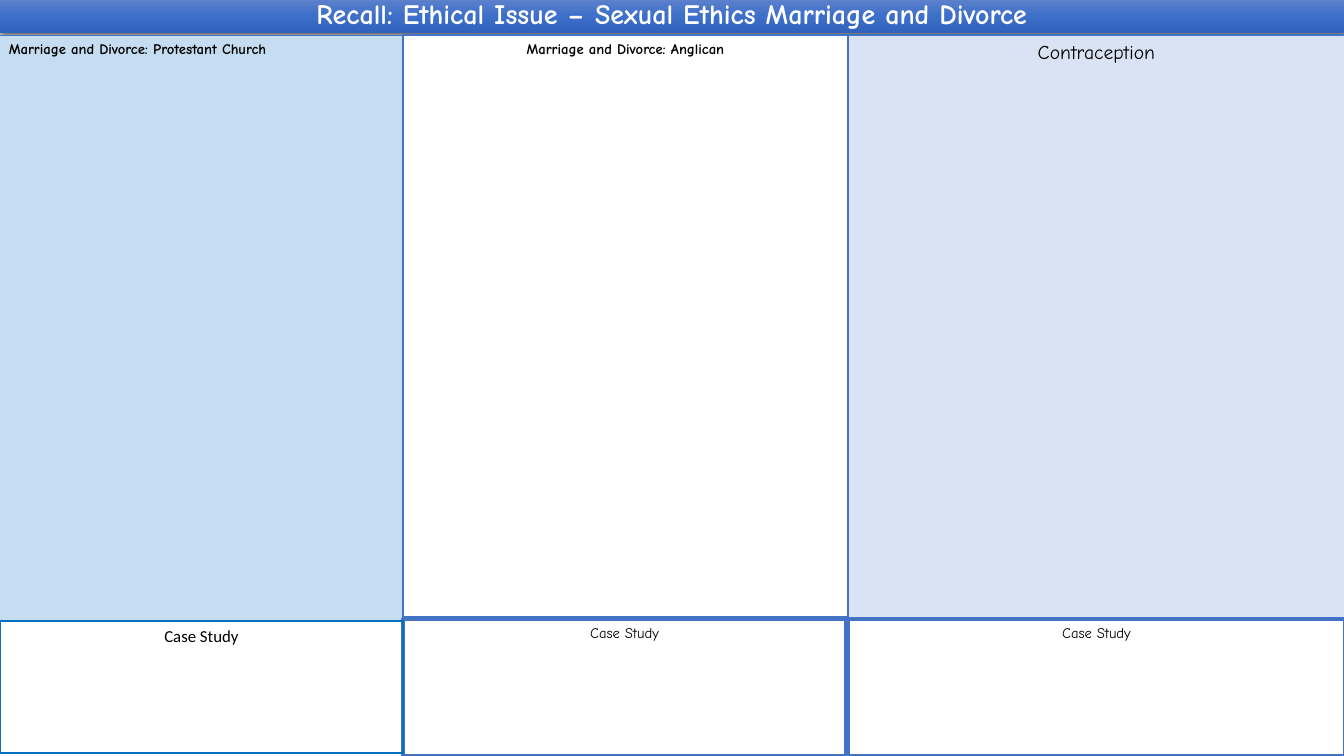
from dataclasses import dataclass

from lxml import etree
from pptx import Presentation
from pptx.dml.color import RGBColor
from pptx.enum.shapes import MSO_SHAPE
from pptx.enum.text import MSO_ANCHOR, MSO_AUTO_SIZE, PP_ALIGN
from pptx.oxml import parse_xml
from pptx.oxml.ns import nsdecls, qn
from pptx.shapes.base import BaseShape
from pptx.slide import Slide
from pptx.text.text import TextFrame
from pptx.util import Emu, Pt

RECTANGLE = MSO_SHAPE.RECTANGLE
TOP, MIDDLE = MSO_ANCHOR.TOP, MSO_ANCHOR.MIDDLE
LEFT, CENTER = PP_ALIGN.LEFT, PP_ALIGN.CENTER
NO_AUTOFIT = MSO_AUTO_SIZE.NONE

SLIDE_WIDTH, SLIDE_HEIGHT = 1344, 756
EMU_PER_PX = 12192000 / SLIDE_WIDTH
TITLE_ONLY_LAYOUT = 5

WHITE = RGBColor(0xFF, 0xFF, 0xFF)
BLACK = RGBColor(0x00, 0x00, 0x00)
SKY = RGBColor(0xC6, 0xDC, 0xF0)
LAVENDER = RGBColor(0xDA, 0xE3, 0xF3)
BLUE = RGBColor(0x44, 0x72, 0xC4)
BRIGHT_BLUE = RGBColor(0x00, 0x70, 0xC0)
BANNER_STOPS = (
    (0, RGBColor(0x61, 0x83, 0xCB)),
    (50, RGBColor(0x3E, 0x70, 0xCA)),
    (100, RGBColor(0x30, 0x62, 0xBB)),
)
COMIC = "Comic Neue"


@dataclass(frozen=True)
class Box:
    text: str
    left: int
    top: int
    width: int
    height: int
    fill: RGBColor | None = WHITE
    line: RGBColor = BLUE
    line_width: float = 1
    size: float = 10.5
    font: str = COMIC
    bold: bool = False
    align: PP_ALIGN = CENTER


BOXES = (
    Box("Marriage and Divorce: Protestant Church", -1, 35, 404, 586,
        fill=SKY, line_width=0.5, bold=True, align=LEFT),
    Box("Marriage and Divorce: Anglican", 403, 35, 445, 582, bold=True),
    Box("Case Study", 403, 619, 443, 137, line_width=2.25),
    Box("Contraception", 848, 35, 497, 595, fill=LAVENDER, size=14),
    Box("Case Study", 0, 621, 403, 132, fill=None, line=BRIGHT_BLUE,
        line_width=1.5, size=12, font="Calibri"),
    Box("Case Study", 848, 619, 497, 137, line_width=2.25),
)


def px(length: int) -> Emu:
    return Emu(round(length * EMU_PER_PX))


def write_text(frame: TextFrame, text: str, *, size: float, font: str = COMIC,
               color: RGBColor = BLACK, bold: bool = False,
               align: PP_ALIGN = CENTER, anchor: MSO_ANCHOR = TOP,
               line_spacing: float = 1.0) -> None:
    frame.word_wrap = True
    frame.auto_size = NO_AUTOFIT
    frame.vertical_anchor = anchor
    paragraph = frame.paragraphs[0]
    paragraph.alignment = align
    paragraph.line_spacing = line_spacing
    run = paragraph.add_run()
    run.text = text
    run.font.name = font
    run.font.size = Pt(size)
    run.font.bold = bold
    run.font.color.rgb = color


def fill_banner(shape: BaseShape) -> None:
    shape.fill.gradient()
    shape.fill.gradient_angle = 270
    stop_list = shape._element.spPr.find(qn("a:gradFill")).find(qn("a:gsLst"))
    for stop in list(stop_list):
        stop_list.remove(stop)
    for position, color in BANNER_STOPS:
        stop = etree.SubElement(stop_list, qn("a:gs"), pos=str(position * 1000))
        etree.SubElement(stop, qn("a:srgbClr"), val=str(color))


def add_shadow(shape: BaseShape) -> None:
    shape.shadow.inherit = False
    effects = shape._element.spPr.find(qn("a:effectLst"))
    effects.append(parse_xml(
        f'<a:outerShdw {nsdecls("a")} blurRad="{Pt(4.5)}" dist="{Pt(1.5)}" '
        'dir="5400000" algn="ctr" rotWithShape="0">'
        '<a:srgbClr val="000000"><a:alpha val="63000"/></a:srgbClr>'
        '</a:outerShdw>'))


def format_title(slide: Slide) -> None:
    title = slide.shapes.title
    title.left, title.top = px(0), px(-2)
    title.width, title.height = px(SLIDE_WIDTH), px(35)
    fill_banner(title)
    title.line.fill.background()
    add_shadow(title)
    write_text(title.text_frame,
               "Recall: Ethical Issue – Sexual Ethics Marriage and Divorce",
               size=20, color=WHITE, bold=True, anchor=MIDDLE, line_spacing=0.9)


def add_box(slide: Slide, box: Box) -> None:
    shape = slide.shapes.add_shape(RECTANGLE, px(box.left), px(box.top),
                                   px(box.width), px(box.height))
    shape.shadow.inherit = False
    if box.fill is None:
        shape.fill.background()
    else:
        shape.fill.solid()
        shape.fill.fore_color.rgb = box.fill
    shape.line.color.rgb = box.line
    shape.line.width = Pt(box.line_width)
    write_text(shape.text_frame, box.text, size=box.size, font=box.font,
               bold=box.bold, align=box.align)


def main() -> None:
    presentation = Presentation()
    presentation.slide_width = px(SLIDE_WIDTH)
    presentation.slide_height = px(SLIDE_HEIGHT)
    layout = presentation.slide_layouts[TITLE_ONLY_LAYOUT]
    slide = presentation.slides.add_slide(layout)
    format_title(slide)
    for box in BOXES:
        add_box(slide, box)
    presentation.save("out.pptx")


if __name__ == "__main__":
    main()
